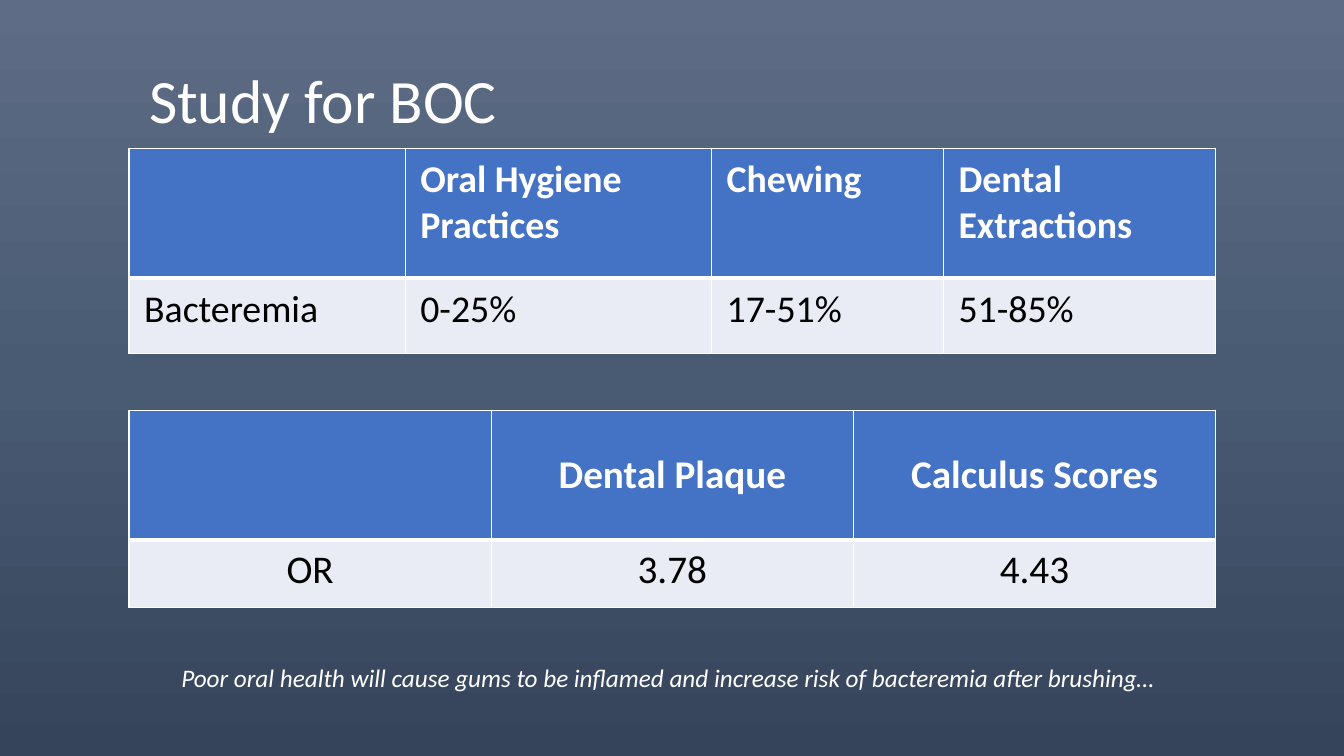
"""Build the slide "Study for BOC" with two tables of bacteremia figures."""
from copy import deepcopy

from lxml import etree
from pptx import Presentation
from pptx.dml import color
from pptx.enum import text
from pptx.oxml import ns
from pptx.util import Pt

WHITE = color.RGBColor(0xFF, 0xFF, 0xFF)
BLACK = color.RGBColor(0, 0, 0)
BLUE = color.RGBColor(0x44, 0x72, 0xC4)
PALE = color.RGBColor(0xE9, 0xEB, 0xF5)
BACKDROP = [color.RGBColor(0x5E, 0x6D, 0x85),
            color.RGBColor(0x49, 0x5A, 0x73),
            color.RGBColor(0x35, 0x44, 0x5A)]
TABLE_LEFT = 92.16
TABLE_WIDTH = 776.16
HEADER_HEIGHT = 92.88


def write(para, words, **format_values):
    span = para.add_run()
    span.text = words
    span.font.name = "Calibri"
    span.font.color.rgb = format_values.pop("rgb", WHITE)
    for name, value in format_values.items():
        setattr(span.font, name, value)


def add_border(cell, side, position, width):
    properties = cell._tc.get_or_add_tcPr()
    line = etree.Element(ns.qn(f"a:ln{side}"), w=str(Pt(width)))
    fill = etree.SubElement(line, ns.qn("a:solidFill"))
    etree.SubElement(fill, ns.qn("a:srgbClr"), val=str(WHITE))
    properties.insert(position, line)


deck = Presentation()
deck.slide_width, deck.slide_height = Pt(960), Pt(540)
page = deck.slides.add_slide(deck.slide_layouts[6])

backdrop = page.background.fill
backdrop.gradient()
backdrop.gradient_angle = 270
stop_list = next(page.element.iter(ns.qn("a:gsLst")))
stop_list.insert(1, deepcopy(stop_list[0]))
for index, (stop, rgb) in enumerate(zip(backdrop.gradient_stops, BACKDROP)):
    stop.position = index / 2
    stop.color.rgb = rgb

tables = [
    dict(top=293.04, widths=[TABLE_WIDTH / 3] * 3, body_height=48.24, size=28,
         align=text.PP_ALIGN.CENTER, header_anchor=text.MSO_ANCHOR.MIDDLE,
         inset_x=7.92, inset_y=4.32,
         rows=[["", "Dental Plaque", "Calculus Scores"],
               ["OR", "3.78", "4.43"]]),
    dict(top=105.84, widths=[197.28, 218.88, 165.6, 194.4], body_height=54, size=27,
         align=text.PP_ALIGN.LEFT, header_anchor=text.MSO_ANCHOR.TOP,
         inset_x=10.8, inset_y=5.76,
         rows=[["", "Oral Hygiene Practices", "Chewing", "Dental Extractions"],
               ["Bacteremia", "0-25%", "17-51%", "51-85%"]]),
]
for data in tables:
    heights = [HEADER_HEIGHT, data["body_height"]]
    table = page.shapes.add_table(
        2, len(data["widths"]), Pt(TABLE_LEFT), Pt(data["top"]),
        Pt(TABLE_WIDTH), Pt(sum(heights))).table
    for column, width in zip(table.columns, data["widths"]):
        column.width = Pt(width)
    for row_index, (row, height) in enumerate(zip(table.rows, heights)):
        row.height = Pt(height)
        header = row_index == 0
        for cell, words in zip(row.cells, data["rows"][row_index]):
            cell.margin_left = cell.margin_right = Pt(data["inset_x"])
            cell.margin_top = cell.margin_bottom = Pt(data["inset_y"])
            cell.vertical_anchor = data["header_anchor"] if header else text.MSO_ANCHOR.TOP
            cell.fill.solid()
            cell.fill.fore_color.rgb = BLUE if header else PALE
            for position, side in enumerate("LRTB"):
                add_border(cell, side, position, 3 if header and side == "B" else 1)
            if words:
                para = cell.text_frame.paragraphs[0]
                para.alignment = data["align"]
                write(para, words, size=Pt(data["size"]), bold=header,
                      rgb=WHITE if header else BLACK)

title = page.shapes.add_textbox(Pt(99.36), Pt(43.2), Pt(TABLE_WIDTH), Pt(61.2))
title.text_frame.word_wrap = True
title.text_frame.vertical_anchor = text.MSO_ANCHOR.MIDDLE
title_para = title.text_frame.paragraphs[0]
title_para.line_spacing = 0.9
write(title_para, "Study for BOC", size=Pt(44))

remark = page.shapes.add_textbox(Pt(122.4), Pt(469.44), Pt(728.64), Pt(28.8))
remark.text_frame.word_wrap = True
remark.text_frame.auto_size = text.MSO_AUTO_SIZE.SHAPE_TO_FIT_TEXT
write(remark.text_frame.paragraphs[0],
      "Poor oral health will cause gums to be inflamed and increase risk of "
      "bacteremia after brushing…", size=Pt(18), italic=True)

deck.save("out.pptx")
